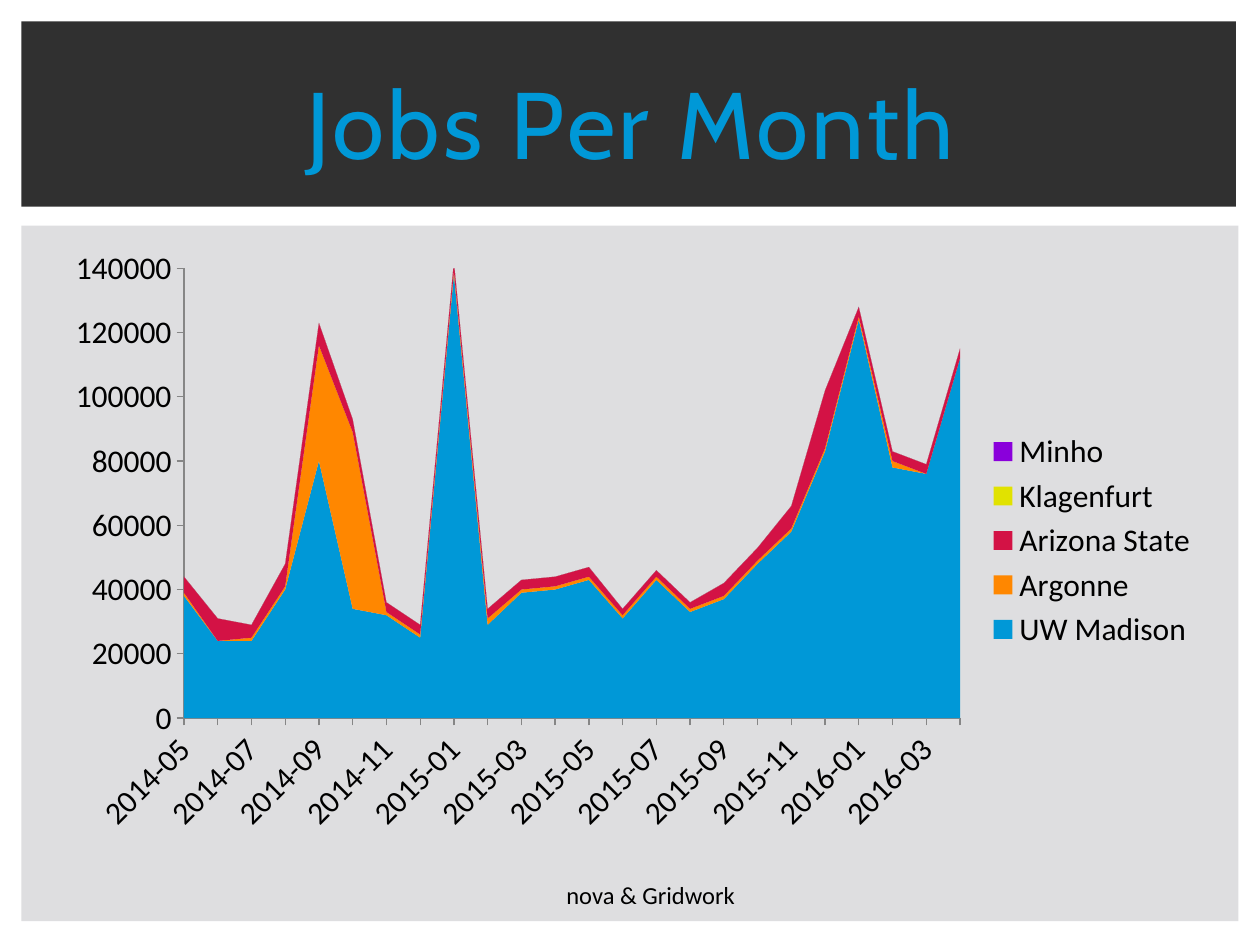
from dataclasses import dataclass

from lxml.etree import SubElement
from pptx import Presentation
from pptx.chart.data import CategoryChartData
from pptx.dml.color import RGBColor
from pptx.enum.chart import XL_CHART_TYPE, XL_LEGEND_POSITION, XL_TICK_MARK
from pptx.enum.shapes import MSO_SHAPE
from pptx.enum.text import MSO_ANCHOR, PP_ALIGN
from pptx.oxml import parse_xml
from pptx.oxml.ns import nsdecls, qn
from pptx.util import Inches, Pt

BLACK = RGBColor(0x00, 0x00, 0x00)
AXIS_GRAY = RGBColor(0x86, 0x86, 0x86)
PANEL_GRAY = RGBColor(0xDE, 0xDE, 0xE0)
BAND_DARK = RGBColor(0x30, 0x30, 0x30)
BLUE = RGBColor(0x00, 0x98, 0xD7)
ORANGE = RGBColor(0xFF, 0x87, 0x00)
RED = RGBColor(0xD3, 0x12, 0x45)
YELLOW = RGBColor(0xE1, 0xE2, 0x00)
PURPLE = RGBColor(0x8A, 0x00, 0xDB)


@dataclass
class Box:
    left: float
    top: float
    width: float
    height: float

    def lengths(self) -> tuple:
        return tuple(Inches(v) for v in (self.left, self.top, self.width, self.height))


@dataclass
class Panel:
    box: Box
    color: RGBColor


@dataclass
class Site:
    name: str
    color: RGBColor
    thousands: list


PANELS = [
    Panel(Box(0.17, 1.79, 9.66, 5.52), PANEL_GRAY),
    Panel(Box(0.17, 0.17, 9.64, 1.47), BAND_DARK),
]
CHART_BOX = Box(0.42, 1.88, 9.19, 4.82)
PLOT_BOX = Box(1.46, 2.13, 6.16, 3.57)
TITLE_BOX = Box(0.42, 0.39, 9.17, 1.15)
FOOTER_BOX = Box(3.33, 6.95, 3.67, 0.3)

# 24 months from May 2014
MONTHS = [f"{2014 + m // 12}-{m % 12 + 1:02}" for m in range(4, 28)]
SITES = [
    Site("UW Madison", BLUE, [38, 24, 24, 40, 80, 34, 32, 25, 138, 29, 39, 40,
                              43, 31, 43, 33, 37, 48, 58, 83, 124, 78, 76, 112]),
    Site("Argonne", ORANGE, [1, 0, 1, 1, 36, 55, 1, 1, 1, 2, 1, 1,
                             1, 1, 1, 1, 1, 1, 1, 1, 1, 2, 0, 0]),
    Site("Arizona State", RED, [5, 7, 4, 7, 7, 4, 3, 3, 3, 3, 3, 3,
                                3, 2, 2, 2, 4, 4, 7, 18, 3, 3, 3, 3]),
    Site("Klagenfurt", YELLOW, [None] * 4 + [0, 0, None, 0] + [None] * 3
         + [0, None] + [0] * 11),
    Site("Minho", PURPLE, [0] * 24),
]


def write_line(frame, text: str, *, size: float, font: str, color: RGBColor,
               spacing: float = 0) -> None:
    """Write one centred line; spacing is the letter spacing in points."""
    frame.word_wrap = True
    frame.vertical_anchor = MSO_ANCHOR.MIDDLE
    frame.margin_top = frame.margin_bottom = 0
    paragraph = frame.paragraphs[0]
    paragraph.alignment = PP_ALIGN.CENTER
    run = paragraph.add_run()
    run.text = text
    run.font.size = Pt(size)
    run.font.name = font
    run.font.color.rgb = color
    if spacing:
        run.font._element.set("spc", str(round(spacing * 100)))


def add_panel(slide, panel: Panel) -> None:
    rectangle = slide.shapes.add_shape(MSO_SHAPE.RECTANGLE, *panel.box.lengths())
    rectangle.shadow.inherit = False
    rectangle.fill.solid()
    rectangle.fill.fore_color.rgb = panel.color
    rectangle.line.fill.background()


def place_plot(chart) -> None:
    """Fix the inner plot area at PLOT_BOX within the chart."""
    plot_area = chart._chartSpace.chart.plotArea
    for old in plot_area.findall(qn("c:layout")):
        plot_area.remove(old)
    layout = parse_xml(f"<c:layout {nsdecls('c')}/>")
    manual = SubElement(layout, qn("c:manualLayout"))
    settings = {
        "layoutTarget": "inner", "xMode": "edge", "yMode": "edge",
        "x": (PLOT_BOX.left - CHART_BOX.left) / CHART_BOX.width,
        "y": (PLOT_BOX.top - CHART_BOX.top) / CHART_BOX.height,
        "w": PLOT_BOX.width / CHART_BOX.width,
        "h": PLOT_BOX.height / CHART_BOX.height,
    }
    for tag, value in settings.items():
        SubElement(manual, qn(f"c:{tag}")).set("val", str(value))
    plot_area.insert(0, layout)


def add_jobs_chart(slide) -> None:
    jobs = CategoryChartData(number_format="General")
    jobs.categories = MONTHS
    for site in SITES:
        jobs.add_series(site.name, [None if v is None else v * 1000 for v in site.thousands])
    chart = slide.shapes.add_chart(
        XL_CHART_TYPE.AREA_STACKED, *CHART_BOX.lengths(), jobs).chart
    chart.has_title = False
    chart.font.size = Pt(18)
    chart.font.name = "Calibri"
    chart.font.color.rgb = BLACK
    chart.has_legend = True
    chart.legend.position = XL_LEGEND_POSITION.RIGHT
    chart.legend.include_in_layout = False

    plot = chart.plots[0]
    plot.vary_by_categories = False
    for series, site in zip(plot.series, SITES):
        series.format.fill.solid()
        series.format.fill.fore_color.rgb = site.color
        series.format.line.fill.background()

    for axis in (chart.category_axis, chart.value_axis):
        axis.has_major_gridlines = False
        axis.major_tick_mark = XL_TICK_MARK.OUTSIDE
        axis.minor_tick_mark = XL_TICK_MARK.NONE
        axis.format.line.color.rgb = AXIS_GRAY
        axis.tick_labels.font.size = Pt(18)
    chart.value_axis.minimum_scale = 0
    chart.value_axis.maximum_scale = 140000
    chart.value_axis.major_unit = 20000
    month_labels = chart.category_axis._element.find(qn("c:txPr"))
    month_labels.find(qn("a:bodyPr")).set("rot", str(-45 * 60000))
    place_plot(chart)


def add_footer(slide) -> None:
    footer = slide.shapes.add_textbox(*FOOTER_BOX.lengths())
    write_line(footer.text_frame, "nova & Gridwork", size=14, font="Calibri", color=BLACK)


def set_title(slide) -> None:
    title = slide.shapes.title
    title.left, title.top, title.width, title.height = TITLE_BOX.lengths()
    write_line(title.text_frame, "Jobs Per Month",
               size=54, font="Cabin", color=BLUE, spacing=2)
    # Bring the title in front of the dark band
    slide.shapes._spTree.append(title._element)


def main() -> None:
    deck = Presentation()
    deck.slide_width, deck.slide_height = Inches(10), Inches(7.5)
    slide = deck.slides.add_slide(deck.slide_layouts[5])
    for panel in PANELS:
        add_panel(slide, panel)
    add_jobs_chart(slide)
    add_footer(slide)
    set_title(slide)
    deck.save("out.pptx")


if __name__ == "__main__":
    main()
